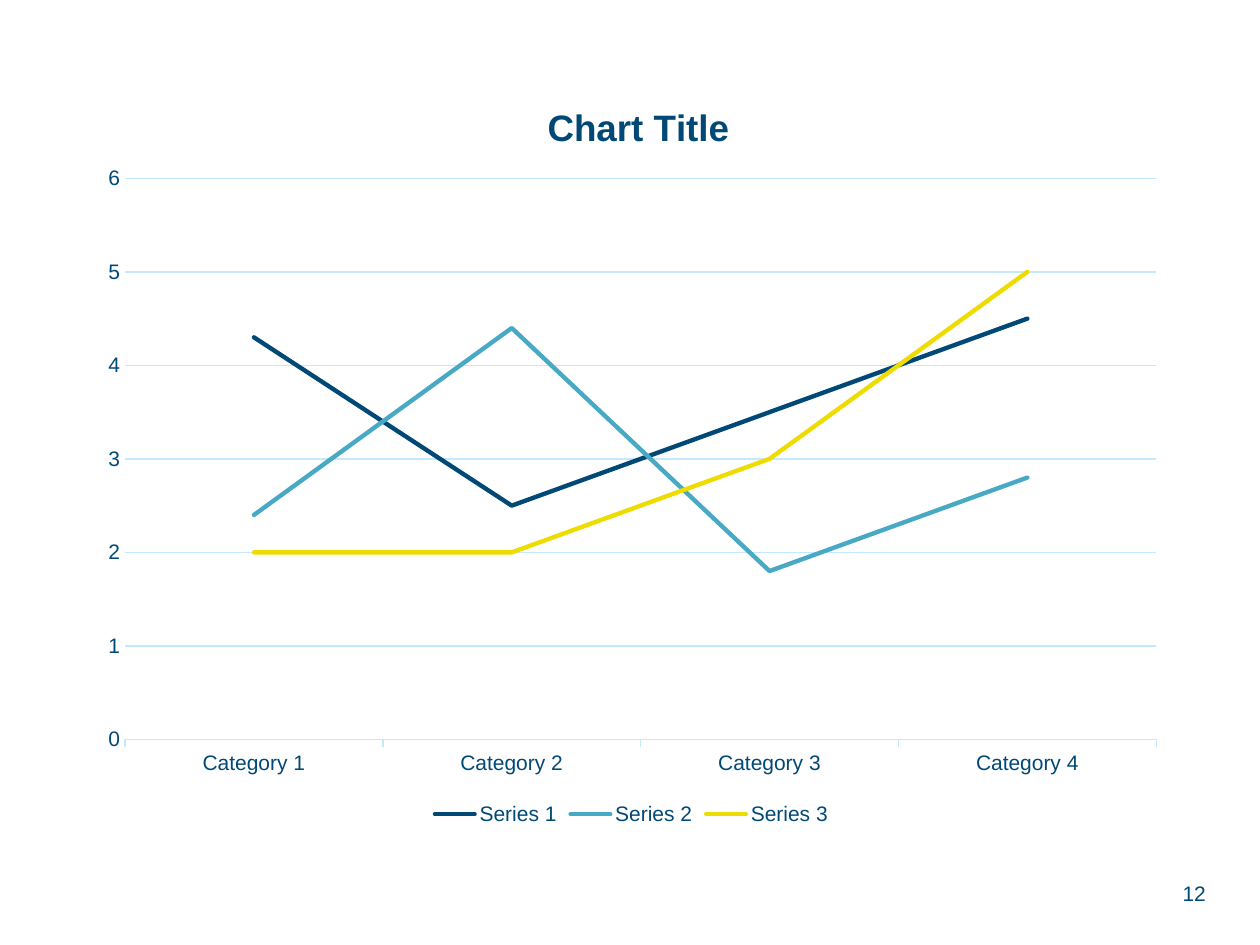
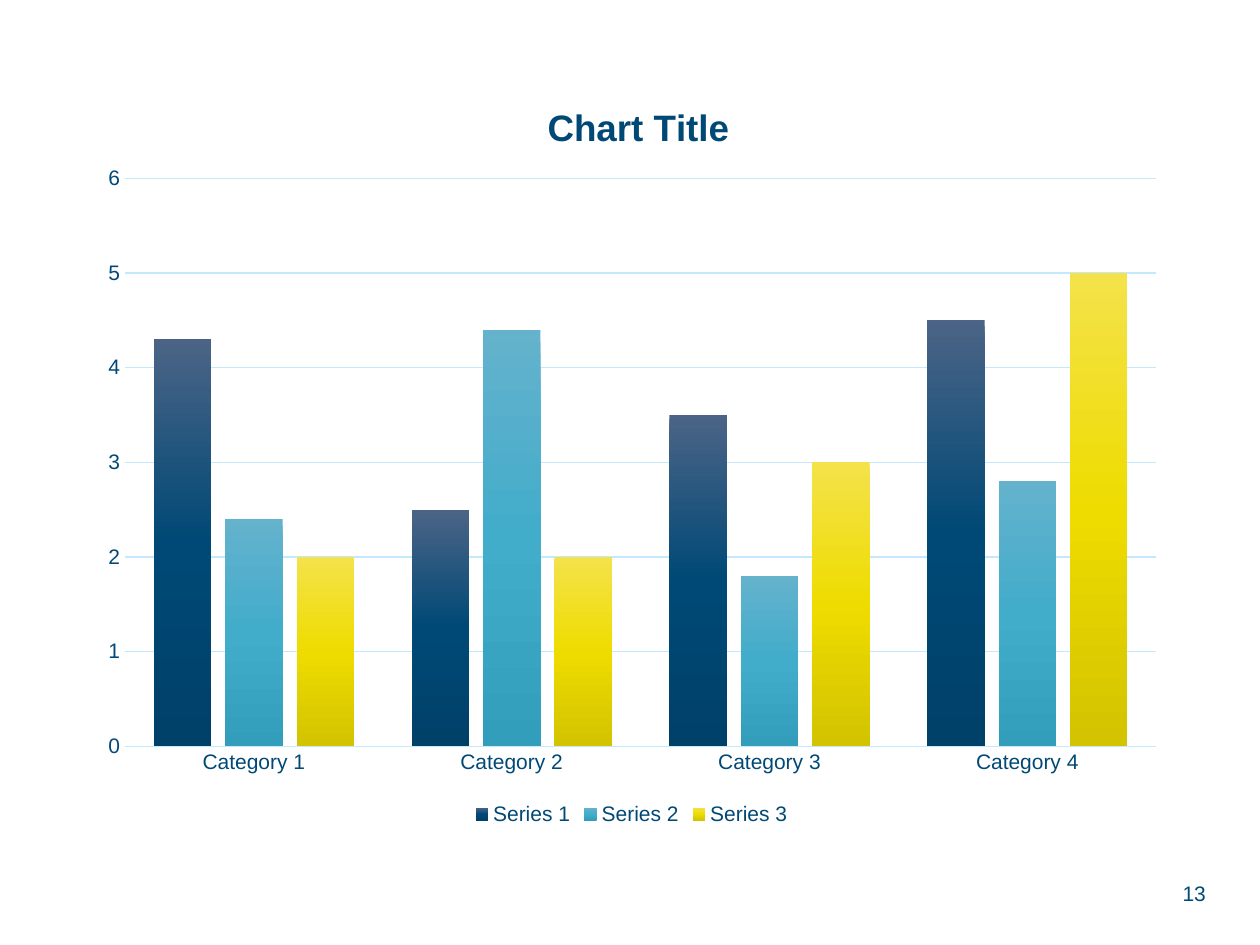
from lxml import etree
from pptx import Presentation
from pptx.chart.data import CategoryChartData
from pptx.dml.color import RGBColor
from pptx.enum.chart import XL_CHART_TYPE, XL_LEGEND_POSITION, XL_TICK_MARK
from pptx.enum.text import MSO_ANCHOR, PP_ALIGN
from pptx.oxml import parse_xml
from pptx.oxml.ns import nsdecls
from pptx.util import Cm, Pt

LINE, COLUMN = XL_CHART_TYPE.LINE, XL_CHART_TYPE.COLUMN_CLUSTERED
TICK_NONE, TICK_OUT = XL_TICK_MARK.NONE, XL_TICK_MARK.OUTSIDE
BOTTOM = XL_LEGEND_POSITION.BOTTOM
MIDDLE, RIGHT = MSO_ANCHOR.MIDDLE, PP_ALIGN.RIGHT

FONT = "Arial"
COLORS = {"navy": "004976", "teal": "48A9C5", "yellow": "EEDC00", "grid": "C4E9FF"}
GRADIENTS = {
    "navy": ("4B6486", "004976", "004169"),
    "teal": ("64B2CC", "42ACCB", "339DBC"),
    "yellow": ("F4E24B", "EEDC00", "D3C300"),
}

TITLE = "Chart Title"
CATEGORIES = ["Category 1", "Category 2", "Category 3", "Category 4"]
SERIES = [
    ("Series 1", (4.3, 2.5, 3.5, 4.5), "navy"),
    ("Series 2", (2.4, 4.4, 1.8, 2.8), "teal"),
    ("Series 3", (2, 2, 3, 5), "yellow"),
]
SLIDES = [
    {"number": "12", "kind": LINE, "tick": TICK_OUT, "plot_height": 0.735},
    {"number": "13", "kind": COLUMN, "tick": TICK_NONE, "plot_height": 0.744},
]

CHART_BOX = (Cm(1.73), Cm(1.35), Cm(22), Cm(15.39))
NUMBER_BOX = (Cm(18.85), Cm(17.5), Cm(5.71), Cm(1.02))


def style_font(font, size, bold=False):
    font.name = FONT
    font.size = Pt(size)
    font.bold = bold
    font.color.rgb = RGBColor.from_string(COLORS["navy"])


def style_line(line, color, width):
    line.color.rgb = RGBColor.from_string(COLORS[color])
    line.width = Pt(width)


def set_layout(parent, index, **values):
    for old in parent.findall("{*}layout"):
        parent.remove(old)
    parts = "".join(f'<c:{key} val="{value}"/>' for key, value in values.items())
    parent.insert(index, parse_xml(
        f'<c:layout {nsdecls("c")}><c:manualLayout>{parts}</c:manualLayout></c:layout>'))


def fill_gradient(series, stops):
    fill = series.format.fill
    fill.gradient()
    gradient = series.format._element.spPr.find("{*}gradFill") if hasattr(
        series.format, "_element") else series._element.spPr.find("{*}gradFill")
    for child in list(gradient):
        gradient.remove(child)
    last = len(stops) - 1
    stop_list = etree.SubElement(gradient, gradient.tag.replace("gradFill", "gsLst"))
    for i, color in enumerate(stops):
        stop_list.append(parse_xml(
            f'<a:gs {nsdecls("a")} pos="{100000 * i // last}"><a:srgbClr val="{color}"/></a:gs>'))
    gradient.append(parse_xml(f'<a:lin {nsdecls("a")} ang="5400000" scaled="0"/>'))


def style_axes(chart, tick):
    for axis in (chart.category_axis, chart.value_axis):
        axis.major_tick_mark = TICK_NONE
        axis.minor_tick_mark = TICK_NONE
        style_font(axis.tick_labels.font, 12)
    chart.category_axis.major_tick_mark = tick
    style_line(chart.category_axis.format.line, "grid", 0.75)

    values = chart.value_axis
    values.minimum_scale, values.maximum_scale, values.major_unit = 0, 6, 1
    values.format.line.fill.background()
    style_line(values.major_gridlines.format.line, "grid", 0.75)


def style_series(chart, kind):
    plot = chart.plots[0]
    plot.vary_by_categories = False
    if kind == COLUMN:
        plot.gap_width, plot.overlap = 100, -24
    for series, (_, _, color) in zip(plot.series, SERIES):
        if kind == COLUMN:
            fill_gradient(series, GRADIENTS[color])
        else:
            series.smooth = False
            style_line(series.format.line, color, 2.5)
            series._element.spPr.find("{*}ln").set("cap", "rnd")


def add_series_chart(slide, kind, tick, plot_height):
    data = CategoryChartData()
    data.categories = CATEGORIES
    for name, values, _ in SERIES:
        data.add_series(name, values)
    chart = slide.shapes.add_chart(kind, *CHART_BOX, data).chart
    style_font(chart.font, 10)

    title = chart.chart_title.text_frame
    title.text = TITLE
    style_font(title.paragraphs[0].runs[0].font, 21, bold=True)

    chart.has_legend = True
    chart.legend.position = BOTTOM
    chart.legend.include_in_layout = False
    style_font(chart.legend.font, 12)

    style_axes(chart, tick)
    style_series(chart, kind)
    plot_area = chart._chartSpace.chart.plotArea
    set_layout(plot_area, 0, layoutTarget="inner", xMode="edge", yMode="edge",
               x=0.036, y=0.146, w=0.945, h=plot_height)
    set_layout(chart.chart_title._element, 1, xMode="edge", yMode="edge", x=0.417, y=0.04)


def add_slide_number(slide, number):
    frame = slide.shapes.add_textbox(*NUMBER_BOX).text_frame
    frame.word_wrap = True
    frame.vertical_anchor = MIDDLE
    frame.text = number
    paragraph = frame.paragraphs[0]
    paragraph.alignment = RIGHT
    style_font(paragraph.runs[0].font, 12)


def main():
    deck = Presentation()
    deck.slide_width, deck.slide_height = Cm(25.4), Cm(19.05)
    for content in SLIDES:
        slide = deck.slides.add_slide(deck.slide_layouts[6])
        add_slide_number(slide, content["number"])
        add_series_chart(slide, content["kind"], content["tick"], content["plot_height"])
    deck.save("out.pptx")


if __name__ == "__main__":
    main()
